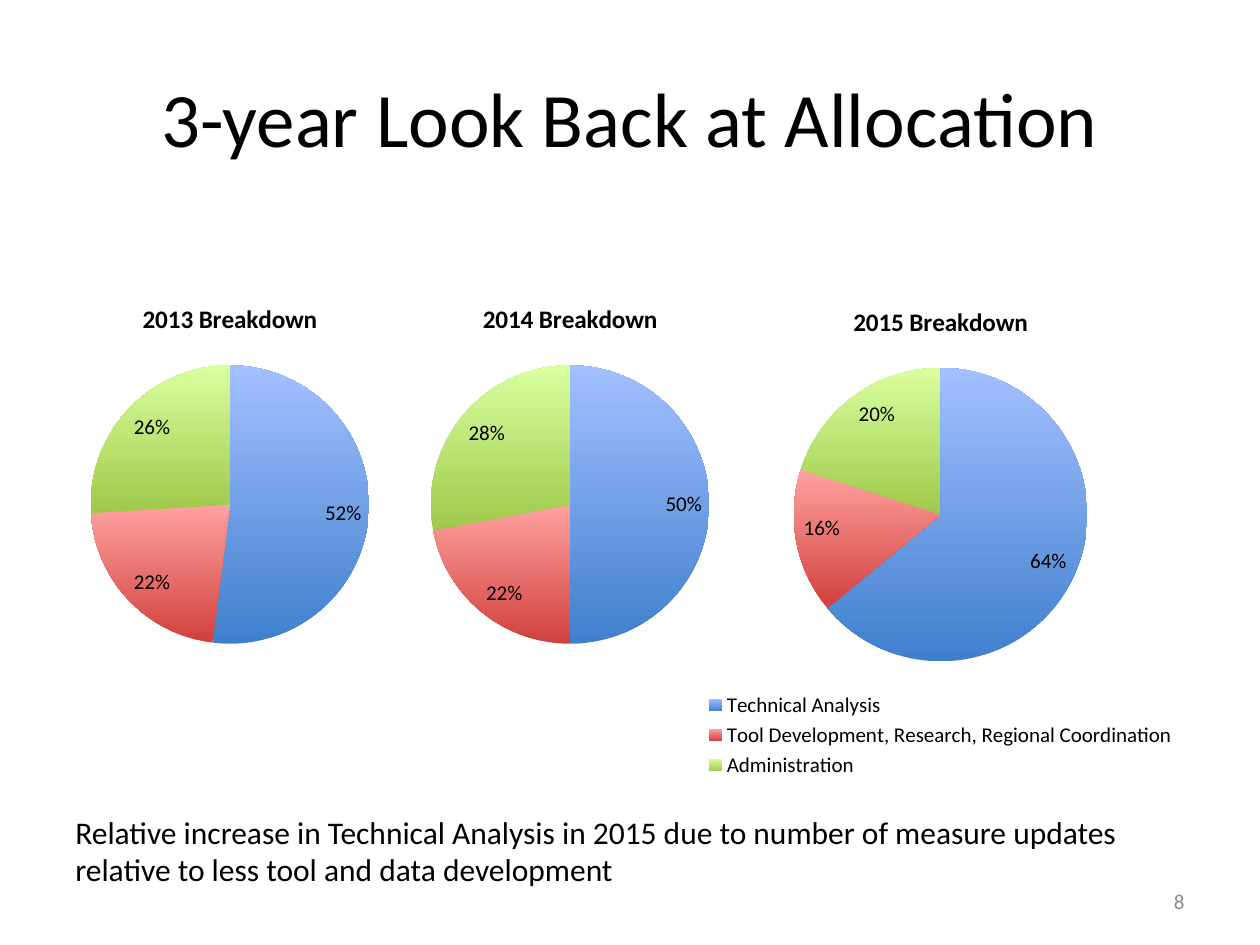
from lxml import etree
from pptx import Presentation
from pptx import util as u
from pptx.chart.data import CategoryChartData
from pptx.dml.color import RGBColor
from pptx.enum import chart as ch, text
from pptx.oxml.ns import qn

FONT = "Calibri"
COLORS = {"text": "000000", "number": "8C8C8C"}
GRADIENTS = [("3F80CD", "A3C0FF"), ("D1403C", "FFA2A0"), ("9FC94A", "D9FF9F")]
TITLE = "3-year Look Back at Allocation"
NOTE = ("Relative increase in Technical Analysis in 2015 due to number of measure "
        "updates relative to less tool and data development")
NUMBER = "8"
SHORT = ["1", "2", "3"]
AREAS = ["Technical Analysis", "Tool Development, Research, Regional Coordination",
         "Administration"]
PIES = [
    {"title": "2013 Breakdown", "box": (0.31, 2.25, 3.03, 3), "pie": (0.72, 2.9, 2.21),
     "cats": SHORT, "vals": [0.52, 0.22, 0.26], "legend": False},
    {"title": "2014 Breakdown", "box": (2.78, 2.25, 3.49, 3), "pie": (3.42, 2.9, 2.21),
     "cats": SHORT, "vals": [0.5, 0.22, 0.28], "legend": False},
    {"title": "2015 Breakdown", "box": (4.93, 2.25, 5.07, 3.96), "pie": (6.3, 2.92, 2.33),
     "cats": AREAS, "vals": [0.64, 0.16, 0.2], "legend": True},
]


def style(font, size, color="text", bold=False):
    font.name = FONT
    font.size = u.Pt(size)
    font.bold = bold
    font.color.rgb = RGBColor.from_string(COLORS[color])


def write(sp, words, size, align, anchor, color="text"):
    tf = sp.text_frame
    tf.word_wrap = True
    tf.vertical_anchor = anchor
    p = tf.paragraphs[0]
    p.alignment = align
    r = p.add_run()
    r.text = words
    style(r.font, size, color)


def place_pie(chart, box, pie):
    left, top, width, height = box
    x, y, side = pie
    area = chart._chartSpace.find(".//" + qn("c:plotArea"))
    for old in area.findall(qn("c:layout")):
        area.remove(old)
    layout = etree.Element(qn("c:layout"))
    manual = etree.SubElement(layout, qn("c:manualLayout"))
    settings = [("layoutTarget", "inner"), ("xMode", "edge"), ("yMode", "edge"),
                ("x", (x - left) / width), ("y", (y - top) / height),
                ("w", side / width), ("h", side / height)]
    for tag, val in settings:
        etree.SubElement(manual, qn("c:" + tag)).set("val", str(val))
    area.insert(0, layout)


def add_pie(s, item):
    data = CategoryChartData(number_format="0%")
    data.categories = item["cats"]
    data.add_series("Series 1", item["vals"])
    frame = s.shapes.add_chart(ch.XL_CHART_TYPE.PIE, *map(u.Inches, item["box"]), data)
    chart = frame.chart
    style(chart.font, 12)
    chart.has_title = True
    p = chart.chart_title.text_frame.paragraphs[0]
    r = p.add_run()
    r.text = item["title"]
    style(r.font, 14.4, bold=True)
    chart.chart_title.include_in_layout = False
    chart.has_legend = item["legend"]
    if item["legend"]:
        chart.legend.position = ch.XL_LEGEND_POSITION.BOTTOM
        chart.legend.include_in_layout = False
        style(chart.legend.font, 12)
    plot = chart.plots[0]
    plot.vary_by_categories = True
    plot.has_data_labels = True
    labels = plot.data_labels
    labels.show_value = True
    labels.show_percentage = False
    labels.number_format = "0%"
    labels.number_format_is_linked = False
    labels.position = ch.XL_LABEL_POSITION.INSIDE_END
    style(labels.font, 12)
    for i, shades in enumerate(GRADIENTS):
        fill = plot.series[0].points[i].format.fill
        fill.gradient()
        fill.gradient_angle = 90
        for stop, shade in zip(fill.gradient_stops, shades):
            stop.color.rgb = RGBColor.from_string(shade)
    place_pie(chart, item["box"], item["pie"])


def main():
    prs = Presentation()
    prs.slide_width, prs.slide_height = u.Inches(10), u.Inches(7.5)
    s = prs.slides.add_slide(prs.slide_layouts[5])
    align, anchor = text.PP_ALIGN, text.MSO_ANCHOR

    title = s.shapes.title
    title.left, title.top, title.width, title.height = map(u.Inches, (0.5, 0.3, 9, 1.25))
    write(title, TITLE, 44, align.CENTER, anchor.MIDDLE)

    note = s.shapes.add_textbox(*map(u.Inches, (0.5, 6.4, 9, 0.71)))
    write(note, NOTE, 18, align.LEFT, anchor.TOP)
    number = s.shapes.add_textbox(*map(u.Inches, (7.17, 6.95, 2.33, 0.4)))
    write(number, NUMBER, 12, align.RIGHT, anchor.MIDDLE, "number")

    for item in PIES:
        add_pie(s, item)
    prs.save("out.pptx")


if __name__ == "__main__":
    main()
